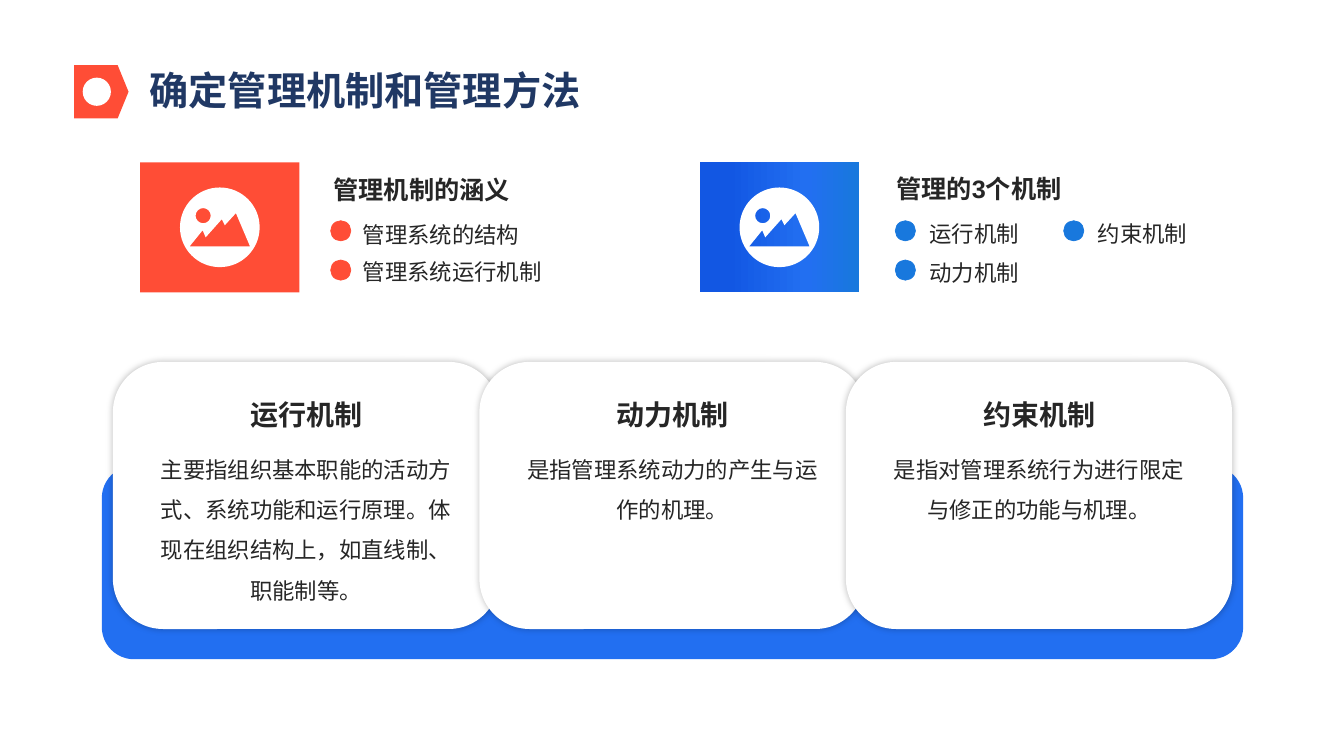
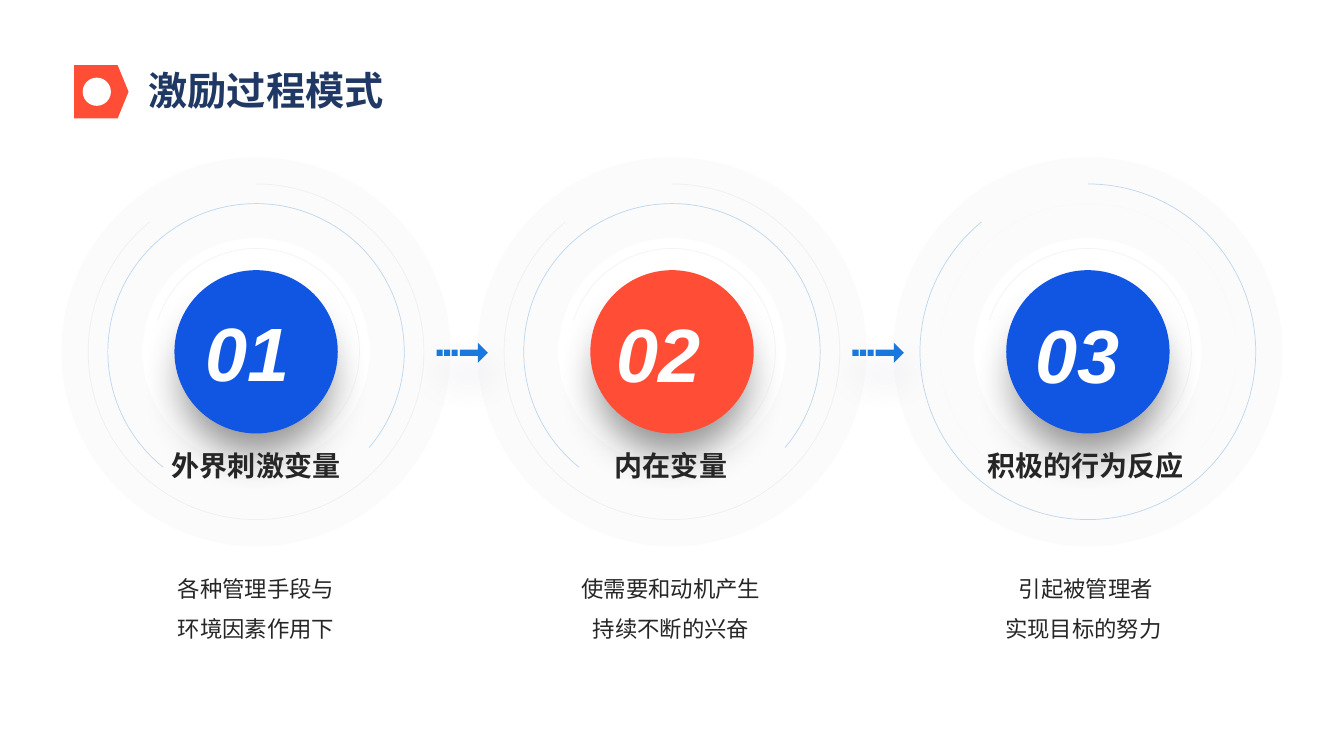
from lxml import etree
from pptx import Presentation
from pptx.dml.color import RGBColor
from pptx.enum.shapes import MSO_SHAPE
from pptx.enum.text import MSO_ANCHOR, PP_ALIGN
from pptx.oxml.ns import qn
from pptx.util import Inches, Pt

RECT, ROUND, OVAL = MSO_SHAPE.RECTANGLE, MSO_SHAPE.ROUNDED_RECTANGLE, MSO_SHAPE.OVAL
DONUT, ARC = MSO_SHAPE.DONUT, MSO_SHAPE.ARC
TAG = MSO_SHAPE.FLOWCHART_OFFPAGE_CONNECTOR
LEFT, CENTER = PP_ALIGN.LEFT, PP_ALIGN.CENTER
TOP, MIDDLE = MSO_ANCHOR.TOP, MSO_ANCHOR.MIDDLE

FONT = "Arial"
NAVY, INK, WHITE, PALE = "203864", "262626", "FFFFFF", "FBFBFB"
RED, BLUE, DEEP, AZURE = "FF4D36", "226FF1", "1156E2", "1878DD"
GREY, SILVER, SKY, ICE = "BFBFBF", "D9D9D9", "BDD7EE", "DEEBF7"
BLUE_STOPS = [(18, "1257E3"), (67, BLUE), (100, AZURE)]


def rgb(value):
    return RGBColor.from_string(value)


# Shared helpers
def add_alpha(color_el, percent):
    etree.SubElement(color_el, qn("a:alpha"), val=str(percent * 1000))


def add_shadow(sp, color, alpha, blur, dist, scale=100):
    effects = sp._element.spPr.find(qn("a:effectLst"))
    outer = etree.SubElement(effects, qn("a:outerShdw"), blurRad=str(Pt(blur)),
                             dist=str(Pt(dist)), dir="5400000",
                             sx=str(scale * 1000), sy=str(scale * 1000),
                             algn="t", rotWithShape="0")
    add_alpha(etree.SubElement(outer, qn("a:srgbClr"), val=color), alpha)


def paint(sp, fill):
    sp.shadow.inherit = False
    sp.line.fill.background()
    if fill:
        sp.fill.solid()
        sp.fill.fore_color.rgb = rgb(fill)
    else:
        sp.fill.background()
    return sp


def paint_gradient(sp, stops):
    sp.fill.gradient()
    sp.fill.gradient_angle = 0
    gs_list = sp._element.spPr.find(qn("a:gradFill")).find(qn("a:gsLst"))
    for gs in list(gs_list):
        gs_list.remove(gs)
    for pos, color in stops:
        gs = etree.SubElement(gs_list, qn("a:gs"), pos=str(pos * 1000))
        etree.SubElement(gs, qn("a:srgbClr"), val=color)


def add_box(s, kind, x, y, w, h, fill=None, adj=()):
    sp = s.shapes.add_shape(kind, Inches(x), Inches(y), Inches(w), Inches(h))
    for i, value in enumerate(adj):
        sp.adjustments[i] = value
    return paint(sp, fill)


def add_outline(s, x, y, contours, fill):
    """Draw closed contours whose points are relative to (x, y)."""
    builder = None
    for contour in contours:
        pts = [(Inches(x + dx), Inches(y + dy)) for dx, dy in contour]
        if builder is None:
            builder = s.shapes.build_freeform(*pts[0])
        else:
            builder.move_to(*pts[0])
        builder.add_line_segments(pts[1:], close=True)
    return paint(builder.convert_to_shape(), fill)


def curve_contours(sp, count):
    """Turn each three segments of the first contours into one Bezier curve."""
    starts = list(sp._element.iter(qn("a:moveTo")))
    for start in starts[:count]:
        segments = []
        for el in start.itersiblings():
            if el.tag != qn("a:lnTo"):
                break
            segments.append(el)
        for i in range(0, len(segments) - 2, 3):
            first, *others = segments[i:i + 3]
            curve = etree.Element(qn("a:cubicBezTo"))
            first.addprevious(curve)
            for el in (first, *others):
                curve.append(el[0])
                el.getparent().remove(el)


def add_text(s, x, y, w, h, lines, size, color=INK, bold=False, italic=False,
             align=CENTER, spacing=1.0, wrap=False, anchor=TOP):
    tf = s.shapes.add_textbox(Inches(x), Inches(y), Inches(w), Inches(h)).text_frame
    tf.word_wrap = wrap
    tf.vertical_anchor = anchor
    for i, line in enumerate(lines):
        p = tf.paragraphs[0] if i == 0 else tf.add_paragraph()
        p.alignment = align
        p.line_spacing = spacing
        r = p.add_run()
        r.text = line
        r.font.name = FONT
        r.font.size = Pt(size)
        r.font.bold = bold
        r.font.italic = italic
        r.font.color.rgb = rgb(color)


def new_slide(prs):
    s = prs.slides.add_slide(prs.slide_layouts[6])
    s.background.fill.solid()
    s.background.fill.fore_color.rgb = rgb(WHITE)
    return s


def add_title(s, title, w):
    add_text(s, 1.36, 0.61, w, 0.57, [title], 28, NAVY, bold=True)
    add_box(s, TAG, 0.74, 0.64, 0.53, 0.54, RED).rotation = 270
    add_box(s, OVAL, 0.82, 0.77, 0.28, 0.28, WHITE).rotation = 270


# Slide 1: topics and cards
def circle(cx, cy, radius):
    """Start point and control points of four quarter curves."""
    k = 0.5523
    unit = [(0, -1), (-k, -1), (-1, -k), (-1, 0), (-1, k), (-k, 1), (0, 1),
            (k, 1), (1, k), (1, 0), (1, -k), (k, -1), (0, -1)]
    return [(cx + radius * ux, cy + radius * uy) for ux, uy in unit]


ICON = [
    circle(0, 0, 0.395),
    circle(-0.165, -0.115, 0.075),
    [(-0.3, 0.19), (-0.17, 0.03), (-0.14, 0.1), (0.02, -0.08),
     (0.05, -0.02), (0.16, -0.14), (0.3, 0.19)],
]


def add_topic(s, x, y, heading_at, heading, dots_dx, label_gap, label_w, items,
              color, stops=None):
    """Icon tile at (x, y), heading, and items (column dx, row, label dy, label)."""
    w, h = 1.58, 1.29
    hx, hy = heading_at
    add_text(s, x + hx, y + hy, 2.41, 0.5, [heading], 18, bold=True,
             align=LEFT, spacing=1.5, wrap=True)
    for dx, row, label_dy, label in items:
        dot_x = x + dots_dx + dx
        add_text(s, dot_x + label_gap, y + label_dy, label_w, 0.4, [label], 16,
                 align=LEFT, spacing=1.2, wrap=True)
        dot = add_box(s, OVAL, dot_x, y + 0.58 + 0.39 * row, 0.2, 0.2, color)
        dot.line.color.rgb = rgb(color)
        dot.line.width = Pt(0.5)
    tile = add_box(s, RECT, x, y, w, h, color)
    if stops:
        paint_gradient(tile, stops)
    icon = add_outline(s, x + w / 2, y + h / 2, ICON, WHITE)
    curve_contours(icon, 2)


def add_card(s, x, y, heading, body, line_count):
    w, h = 3.83, 2.65
    card = add_box(s, ROUND, x, y, w, h, WHITE, [0.188])
    add_shadow(card, "000000", 26, 5, 0)
    add_text(s, x + 1.14, y + 0.19, 1.56, 0.67, [heading], 20, bold=True,
             wrap=True, anchor=MIDDLE)
    add_text(s, x + 0.36, y + 0.75, 3.11, 0.43 * line_count, [body], 16,
             spacing=1.5, wrap=True)


def build_mechanisms(prs):
    s = new_slide(prs)
    add_box(s, ROUND, 1.01, 4.62, 11.32, 1.92, BLUE)
    cards = [
        ("运行机制", "主要指组织基本职能的活动方式、系统功能和运行原理。"
                     "体现在组织结构上，如直线制、职能制等。", 4),
        ("动力机制", "是指管理系统动力的产生与运作的机理。", 2),
        ("约束机制", "是指对管理系统行为进行限定与修正的功能与机理。", 2),
    ]
    for i, card in enumerate(cards):
        add_card(s, 1.12 + 3.635 * i, 3.59, *card)
    add_title(s, "确定管理机制和管理方法", 4.52)
    add_topic(s, 1.39, 1.61, (1.82, -0.08), "管理机制的涵义", 1.89, 0.22, 2,
              [(0, 0, 0.48, "管理系统的结构"), (0, 1, 0.85, "管理系统运行机制")], RED)
    add_topic(s, 6.94, 1.61, (1.85, -0.09), "管理的3个机制", 1.94, 0.24, 1.12,
              [(0, 0, 0.47, "运行机制"), (0, 1, 0.86, "动力机制"),
               (1.67, 0, 0.47, "约束机制")], AZURE, BLUE_STOPS)


# Slide 2: three-step process
ARC_SPANS = [(3.33, (162, 138.45)), (2.94, (77.28, 24.16)), (2.05, (118.57, 32.65))]
FAINT = [(GREY, 20), (SKY, 100), (SILVER, 30)]
STRONG = [(SKY, 100), (ICE, 10), (SILVER, 30)]


def add_centered(s, kind, cx, cy, size, fill=None, adj=()):
    return add_box(s, kind, cx - size / 2, cy - size / 2, size, size, fill, adj)


def add_step(s, cx, cy, number, number_at, color, label, label_w, lines, lines_w,
             text_dx, arc_styles):
    add_centered(s, DONUT, cx, cy, 3.86, PALE, [0.208])
    disc = add_centered(s, OVAL, cx, cy, 1.62, color)
    add_shadow(disc, "000000", 43, 30, 26, scale=90)
    text_cx = cx + text_dx
    add_text(s, text_cx - label_w / 2, cy + 0.91, label_w, 0.44, [label], 20, bold=True)
    add_text(s, text_cx - lines_w / 2, cy + 2.03, lines_w, 0.86, lines, 16, spacing=1.5)
    for (size, span), (line_color, alpha) in zip(ARC_SPANS, arc_styles):
        arc = add_centered(s, ARC, cx, cy, size, adj=span)
        arc.line.color.rgb = rgb(line_color)
        arc.line.width = Pt(0.5)
        add_alpha(arc.line._ln.find(qn("a:solidFill"))[0], alpha)
    dx, dy = number_at
    add_text(s, cx + dx, cy + dy, 1.04, 1.01, [number], 54, WHITE,
             bold=True, italic=True, align=LEFT)


def add_dashed_arrow(s, x, cy):
    half = 0.03
    dashes = [[(dx, -half), (dx + 0.06, -half), (dx + 0.06, half), (dx, half)]
              for dx in (0, 0.075, 0.15)]
    head = [(0.41, -0.1), (0.51, 0), (0.41, 0.1), (0.41, half),
            (0.23, half), (0.23, -half), (0.41, -half)]
    arrow = add_outline(s, x, cy, dashes + [head], AZURE)
    add_shadow(arrow, "000066", 20, 26, 15)


def build_process(prs):
    s = new_slide(prs)
    steps = [
        ("01", (-0.6, -0.5), DEEP, "外界刺激变量", 1.88,
         ["各种管理手段与", "环境因素作用下"], 1.77, 0, FAINT),
        ("02", (-0.65, -0.49), RED, "内在变量", 1.32,
         ["使需要和动机产生", "持续不断的兴奋"], 2, -0.01, FAINT),
        ("03", (-0.62, -0.48), DEEP, "积极的行为反应", 2.17,
         ["引起被管理者", "实现目标的努力 "], 1.84, -0.02, STRONG),
    ]
    pitch, cy = 4.125, 3.49
    for i, step in enumerate(steps):
        add_step(s, 2.54 + pitch * i, cy, *step)
    for i in range(len(steps) - 1):
        add_dashed_arrow(s, 4.33 + pitch * i, 3.5)
    add_title(s, "激励过程模式", 2.56)


def main():
    prs = Presentation()
    prs.slide_width, prs.slide_height = Inches(13.33), Inches(7.5)
    build_mechanisms(prs)
    build_process(prs)
    prs.save("out.pptx")


if __name__ == "__main__":
    main()
